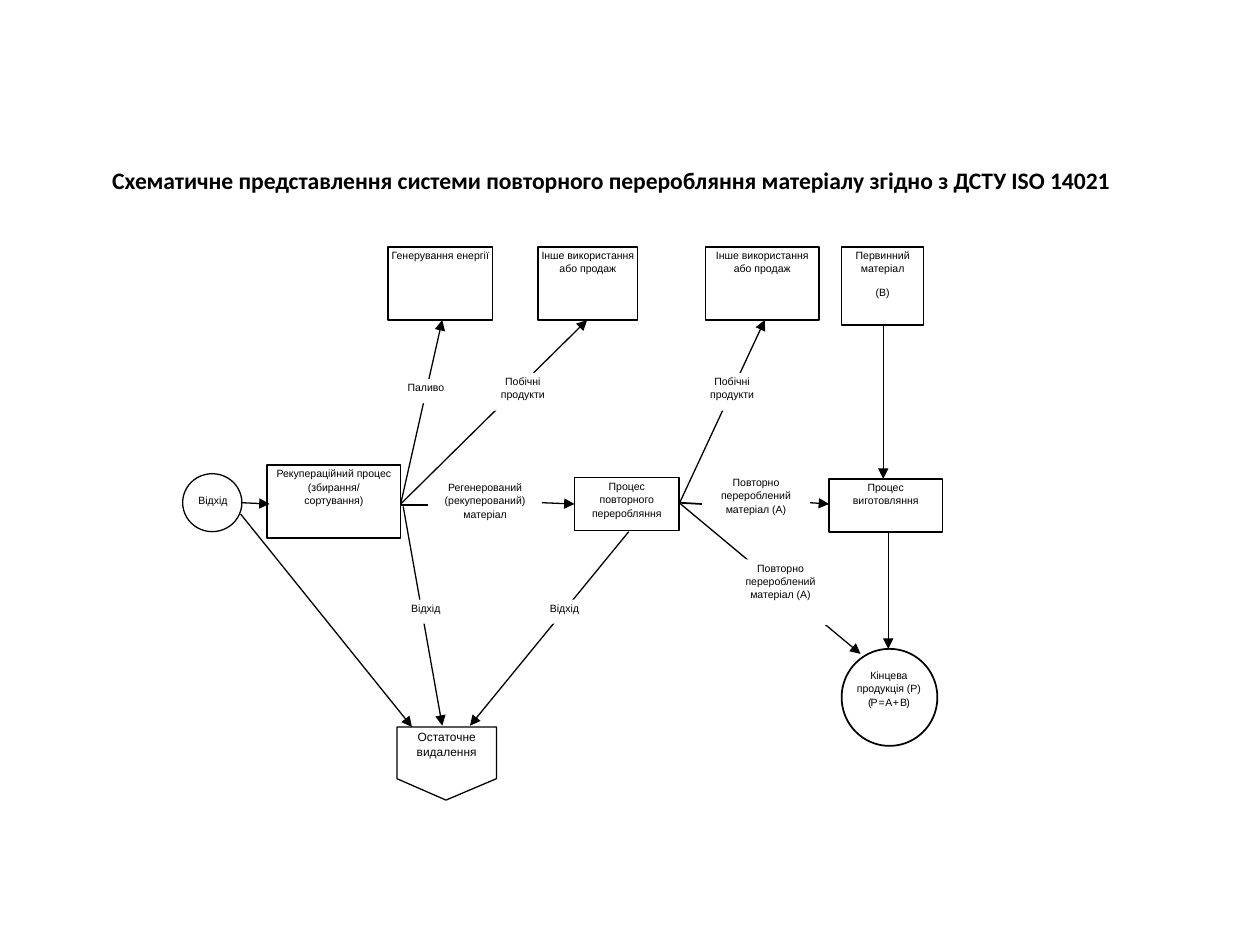
from copy import deepcopy

from lxml import etree
from pptx import Presentation, util as u
from pptx.dml.color import RGBColor
from pptx.enum import shapes, text
from pptx.oxml.ns import qn

HUE = {"ink": "000000", "paper": "FFFFFF"}
KIND = shapes.MSO_SHAPE

deck = Presentation()
deck.slide_width, deck.slide_height = u.Inches(10), u.Inches(7.5)
UNIT = deck.slide_width // 1000  # grid of 1000 columns by 750 rows
slide = deck.slides.add_slide(deck.slide_layouts[1])
items = slide.shapes


def write(frame, words, size=6, font="Arial", bold=False,
          align=text.PP_ALIGN.CENTER, lead=1.07, after=6, inset=1):
    """Fill a frame; a newline starts a paragraph, \\v breaks a line."""
    frame.word_wrap = True
    frame.auto_size = text.MSO_AUTO_SIZE.NONE
    frame.vertical_anchor = text.MSO_ANCHOR.TOP
    frame.margin_left = frame.margin_right = inset * UNIT
    frame.margin_top = frame.margin_bottom = min(inset, 5) * UNIT
    frame.text = words
    for para in frame.paragraphs:
        para.alignment, para.line_spacing = align, lead
        para.space_before, para.space_after = u.Pt(0), u.Pt(after)
        for run in para.runs:
            run.font.size, run.font.name, run.font.bold = u.Pt(size), font, bold
            run.font.color.rgb = RGBColor.from_string(HUE["ink"])
        for gap in para._p.findall(qn("a:br")):
            gap.append(deepcopy(para.runs[0]._r.rPr))


def style(shape, line=None, fill=None):
    shape.shadow.inherit = False
    if fill:
        shape.fill.solid()
        shape.fill.fore_color.rgb = RGBColor.from_string(HUE[fill])
    else:
        shape.fill.background()
    if line:
        shape.line.color.rgb = RGBColor.from_string(HUE["ink"])
        shape.line.width = u.Pt(line)
    else:
        shape.line.fill.background()


# Heading in the body placeholder
items.title._element.getparent().remove(items.title._element)
body = slide.placeholders[1]
body.left, body.top, body.width, body.height = (n * UNIT for n in (79, 129, 862, 490))
body.fill.solid()
body.fill.fore_color.rgb = RGBColor.from_string(HUE["paper"])
write(body.text_frame,
      "Схематичне представлення системи повторного переробляння матеріалу згідно з ДСТУ ISO 14021",
      size=13.5, font="Calibri", bold=True, align=text.PP_ALIGN.LEFT,
      lead=0.9, after=0, inset=10)
props = body.text_frame.paragraphs[0]._p.get_or_add_pPr()
props.set("marL", "0")
props.set("indent", "0")
etree.SubElement(props, qn("a:buNone"))

# Process steps: left, top, width, height, line width, words
SALE = "Інше використання або продаж"
steps = [
    (212, 369, 106, 58, 0.75, "Рекупераційний процес\v(збирання/\vсортування)"),
    (456, 379, 83, 42, 0.75, "Процес\vповторного\vпереробляння"),
    (658, 380, 90, 42, 1, "Процес\vвиготовляння"),
    (308, 196, 83, 58, 1, "Генерування енергії"),
    (427, 196, 79, 58, 1, SALE),
    (560, 196, 90, 58, 1, SALE),
    (668, 196, 65, 62, 0.75, "Первинний матеріал\n(B)"),
]
for *spot, width, words in steps:
    box = items.add_shape(KIND.RECTANGLE, *(n * UNIT for n in spot))
    style(box, line=width)
    write(box.text_frame, words)

# Start and end of the flow
for *spot, width in [(145, 376, 47, 46, 0.75), (668, 515, 76, 77, 1)]:
    style(items.add_shape(KIND.OVAL, *(n * UNIT for n in spot)), line=width)

# Final disposal
pen = items.build_freeform(315, 577, scale=UNIT)
pen.add_line_segments([(394, 577), (394, 618), (354, 635), (315, 618)])
sink = pen.convert_to_shape()
style(sink, line=0.75)
write(sink.text_frame, "Остаточне видалення", size=6.8)

# Flows: from x, y, to x, y, arrow
flows = [
    (192, 399, 214, 400, True), (318, 401, 340, 401, False),
    (430, 399, 456, 400, True), (539, 399, 557, 400, False),
    (643, 399, 658, 400, True),
    (191, 408, 327, 577, True), (320, 402, 351, 576, True),
    (499, 422, 373, 576, True), (539, 399, 683, 519, True),
    (705, 422, 705, 515, True), (701, 257, 701, 380, True),
    (539, 400, 607, 254, True), (318, 400, 466, 254, True),
    (318, 400, 351, 254, True),
]
for *ends, arrow in flows:
    flow = items.add_connector(shapes.MSO_CONNECTOR.STRAIGHT, *(n * UNIT for n in ends))
    flow.line.color.rgb = RGBColor.from_string(HUE["ink"])
    flow.line.width = u.Pt(0.75 if arrow else 1)
    if arrow:
        etree.SubElement(flow.line._get_or_add_ln(), qn("a:tailEnd"), type="triangle")
    etree.SubElement(flow._element.spPr, qn("a:effectLst"))

# Labels: left, top, width, height, fill, words
SIDE, WASTE = "Побічні продукти", "Відхід"
REUSE = "Повторно\vперероблений\vматеріал (А)"
labels = [
    (149, 390, 40, 19, None, WASTE),
    (340, 380, 90, 46, None, "Регенерований\v(рекуперований)\vматеріал"),
    (556, 376, 88, 42, None, REUSE),
    (311, 301, 54, 19, "paper", "Паливо"),
    (388, 296, 54, 30, "paper", SIDE),
    (554, 296, 54, 30, "paper", SIDE),
    (578, 444, 83, 52, "paper", REUSE),
    (311, 476, 54, 19, "paper", WASTE),
    (421, 476, 54, 19, "paper", WASTE),
    (674, 529, 63, 55, None, "Кінцева продукція (P)\v(P = A + B)"),
]
for *spot, fill, words in labels:
    label = items.add_textbox(*(n * UNIT for n in spot))
    style(label, fill=fill)
    write(label.text_frame, words)
total = label.text_frame.paragraphs[0].runs[-1]
total._r.get_or_add_rPr().set("spc", "-50")

deck.save("out.pptx")
